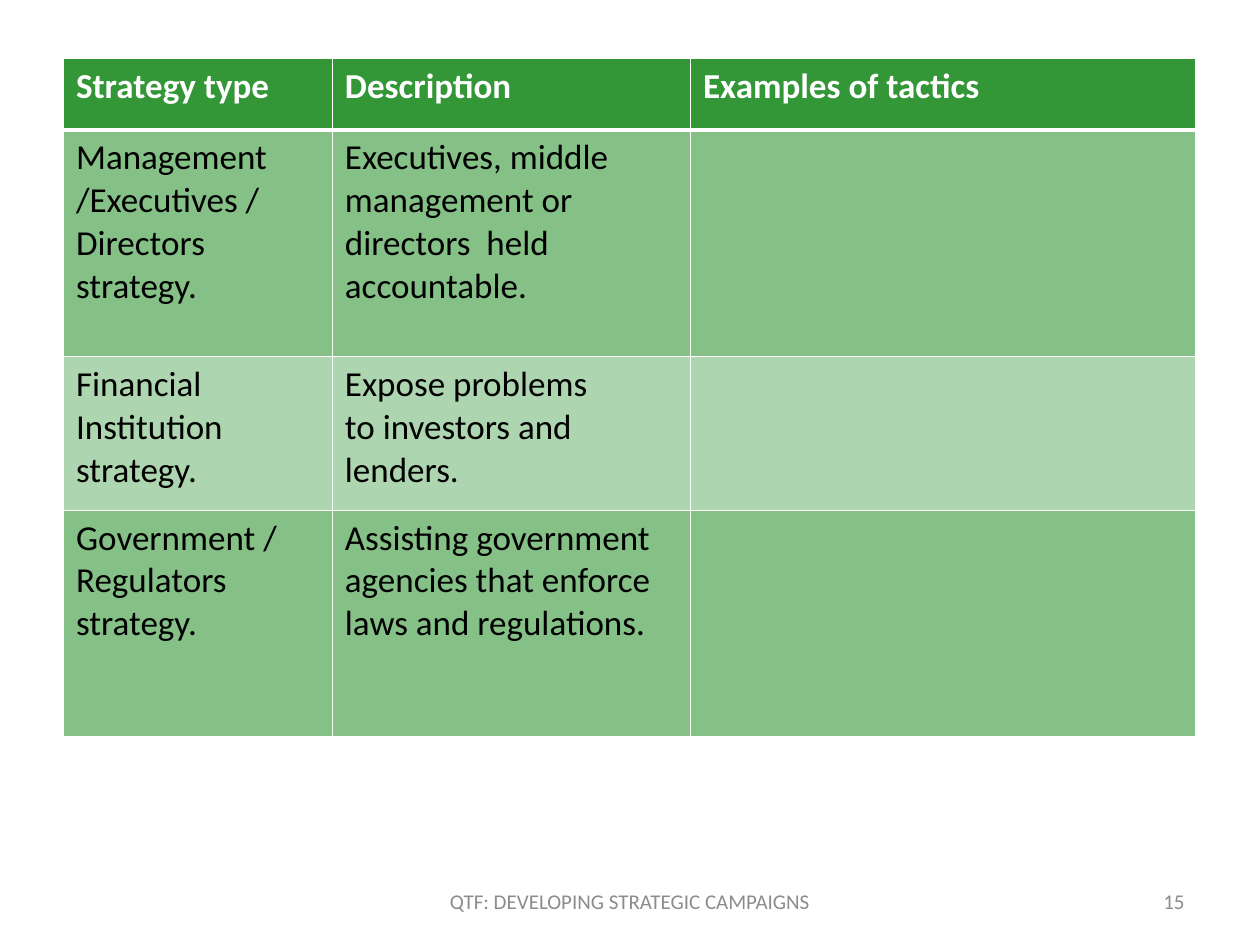
import pptx
import pptx.dml.color
import pptx.enum.text
import pptx.oxml.ns
import pptx.util
from lxml import etree
from pptx.util import Cm, Pt

COLOURS = {
    "green": "349737",
    "header_text": "FFFFFF",
    "body_text": "000000",
    "border": "FFFFFF",
    "footer": "8C8C8C",
}
FONT = "Calibri"
COLUMN_WIDTHS = (5.42, 7.22, 10.19)
ROW_HEIGHTS = (1.44, 4.57, 3.1, 4.57)
ROWS = (
    ("Strategy type", "Description", "Examples of tactics"),
    ("Management /Executives / Directors strategy.",
     "Executives, middle management or directors  held accountable.", ""),
    ("Financial Institution strategy.",
     "Expose problems\nto investors and lenders.", ""),
    ("Government / Regulators strategy.",
     "Assisting government agencies that enforce laws and regulations.", ""),
)


def colour(name):
    return pptx.dml.color.RGBColor.from_string(COLOURS[name])


def add_text(paragraph, text, size, colour_name, bold=False):
    """Add one run per line, with line breaks between them."""
    for index, line in enumerate(text.split("\n")):
        if index:
            paragraph.add_line_break()
        run = paragraph.add_run()
        run.text = line
        run.font.name = FONT
        run.font.size = Pt(size)
        run.font.bold = bold
        run.font.color.rgb = colour(colour_name)


def add_child(parent, tag, **attributes):
    return etree.SubElement(parent, pptx.oxml.ns.qn(tag), attributes)


def set_borders(cell, top, bottom):
    """Draw the four borders; must come before the cell's fill is set."""
    properties = cell._tc.get_or_add_tcPr()
    for side, width in (("L", 1), ("R", 1), ("T", top), ("B", bottom)):
        line = add_child(properties, f"a:ln{side}", w=str(Pt(width)))
        fill = add_child(line, "a:solidFill")
        add_child(fill, "a:srgbClr", val=COLOURS["border"])


def set_fill(cell, opacity):
    cell.fill.solid()
    cell.fill.fore_color.rgb = colour("green")
    if opacity < 100:
        for element in cell._tc.tcPr.findall(
                "a:solidFill/a:srgbClr", pptx.oxml.ns._nsmap):
            add_child(element, "a:alpha", val=str(opacity * 1000))


def add_strategy_table(slide, left, top):
    frame = slide.shapes.add_table(
        len(ROWS), len(COLUMN_WIDTHS), Cm(left), Cm(top),
        Cm(sum(COLUMN_WIDTHS)), Cm(sum(ROW_HEIGHTS)))
    table = frame.table
    table.horz_banding = False
    for column, width in zip(table.columns, COLUMN_WIDTHS):
        column.width = Cm(width)
    for row_index, texts in enumerate(ROWS):
        table.rows[row_index].height = Cm(ROW_HEIGHTS[row_index])
        is_header = row_index == 0
        opacity = 100 if is_header else (60 if row_index % 2 else 40)
        for column_index, text in enumerate(texts):
            cell = table.cell(row_index, column_index)
            set_borders(cell, top=3 if row_index == 1 else 1,
                        bottom=3 if is_header else 1)
            set_fill(cell, opacity)
            if text:
                add_text(cell.text_frame.paragraphs[0], text, 20,
                         "header_text" if is_header else "body_text", is_header)


def add_footer_text(slide, text, left, top, width, height, alignment):
    shape = slide.shapes.add_textbox(Cm(left), Cm(top), Cm(width), Cm(height))
    frame = shape.text_frame
    frame.word_wrap = True
    frame.vertical_anchor = pptx.enum.text.MSO_ANCHOR.MIDDLE
    paragraph = frame.paragraphs[0]
    paragraph.alignment = alignment
    add_text(paragraph, text, 12, "footer")


def add_footer(slide, left, top, width, height):
    """Place the centred campaign name and the page number at the right."""
    align = pptx.enum.text.PP_ALIGN
    name_width, number_width = 8.04, 5.93
    add_footer_text(slide, "QTF: DEVELOPING STRATEGIC CAMPAIGNS",
                    left + (width - name_width) / 2, top, name_width, height,
                    align.CENTER)
    add_footer_text(slide, "15", left + width - number_width, top,
                    number_width, height, align.RIGHT)


def main():
    presentation = pptx.Presentation()
    presentation.slide_width = Cm(25.4)
    presentation.slide_height = Cm(19.05)
    slide = presentation.slides.add_slide(presentation.slide_layouts[6])
    add_strategy_table(slide, left=1.28, top=1.18)
    add_footer(slide, left=1.27, top=17.66, width=22.86, height=1.01)
    presentation.save("out.pptx")


if __name__ == "__main__":
    main()
